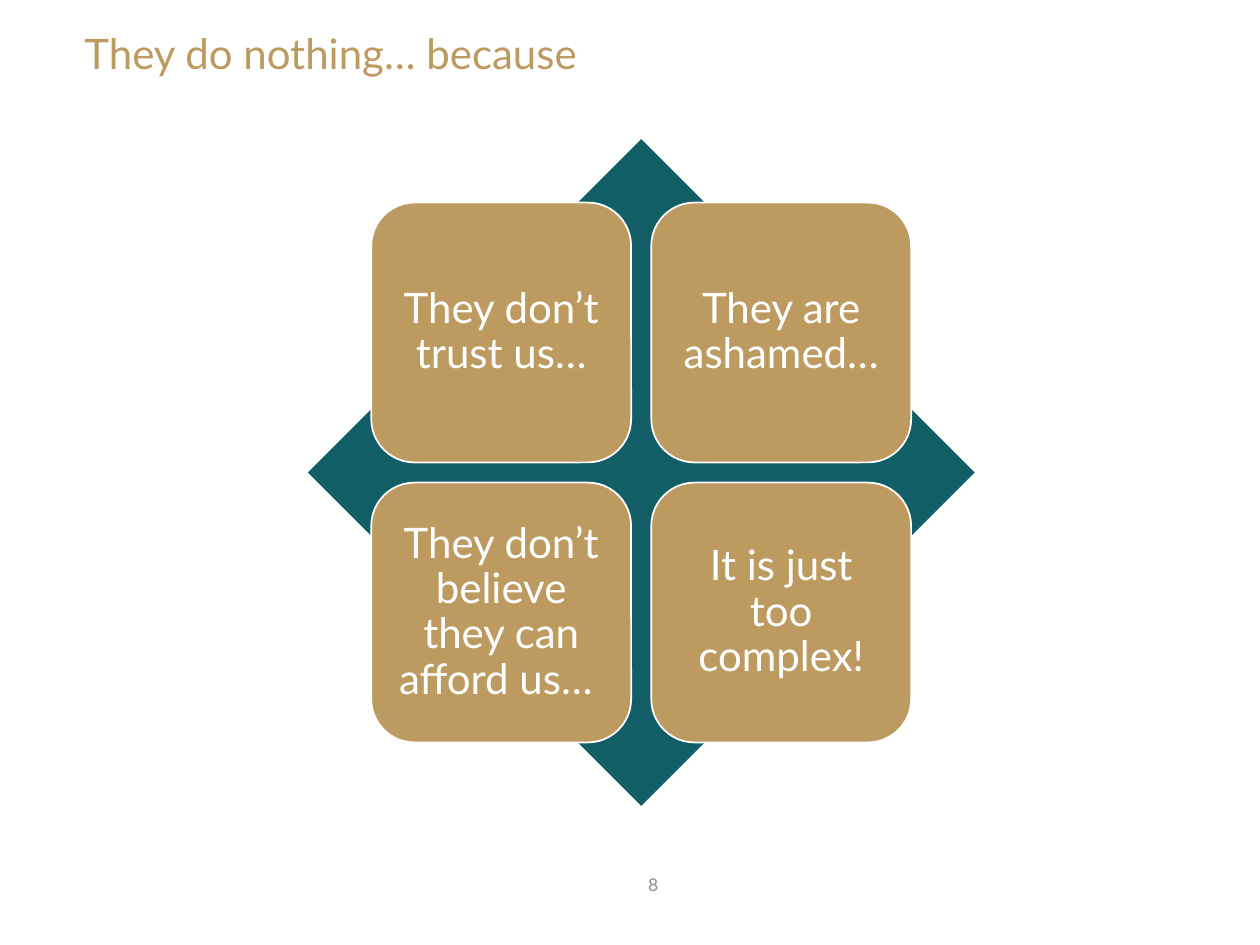
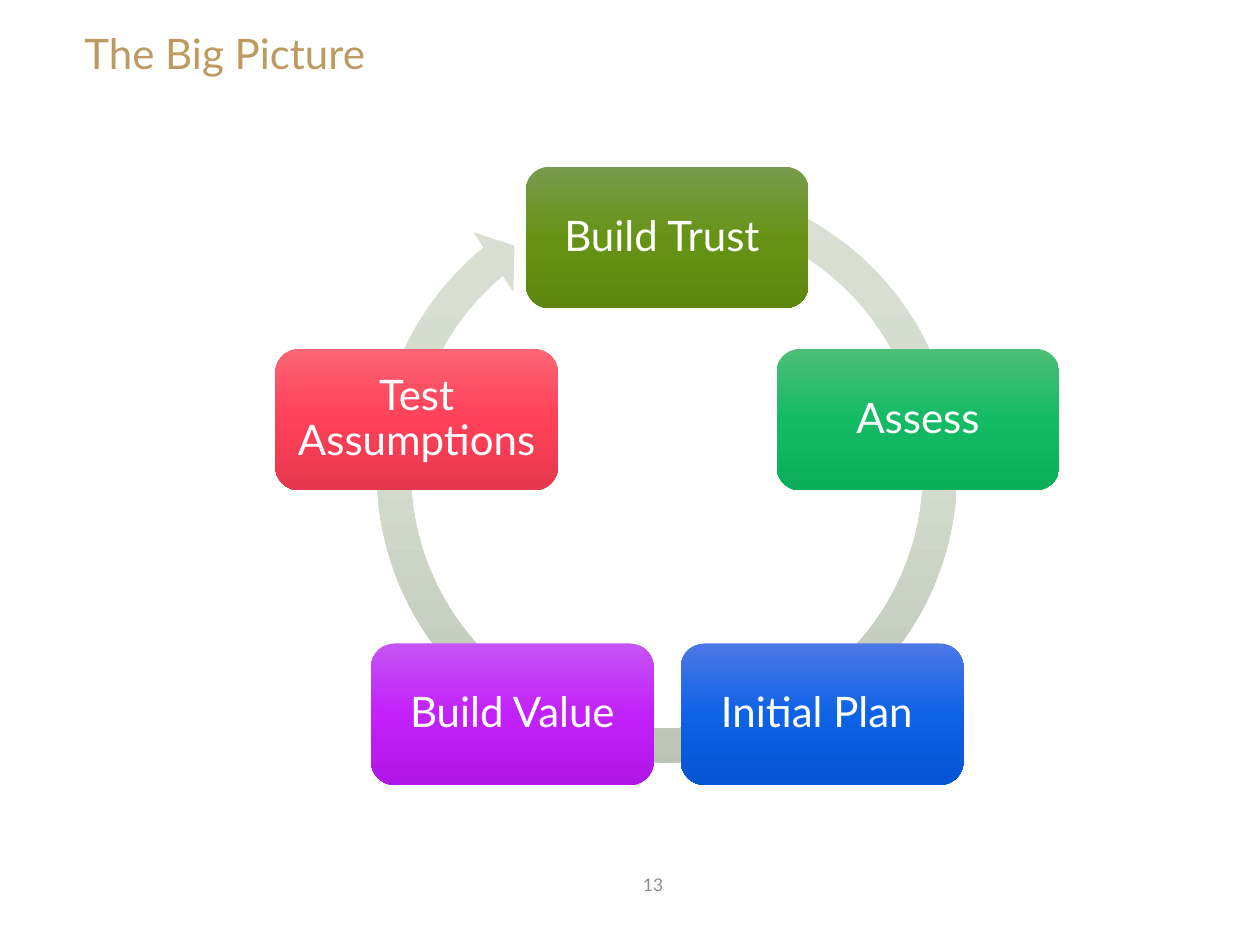
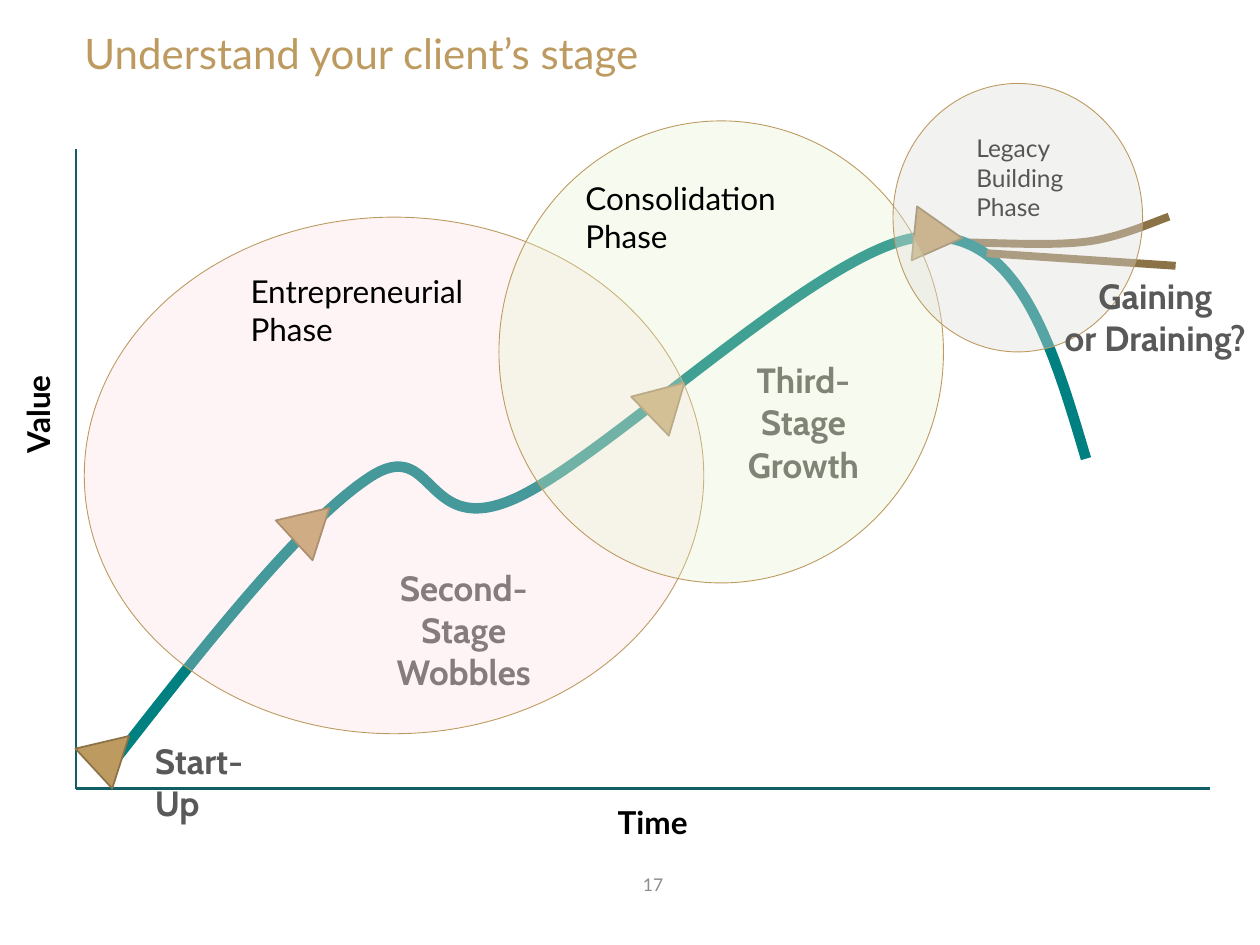
from math import cos, pi, sin

from lxml import etree
from pptx import Presentation
from pptx.dml.color import RGBColor
from pptx.enum.shapes import MSO_CONNECTOR, MSO_SHAPE
from pptx.enum.text import MSO_ANCHOR, PP_ALIGN
from pptx.oxml.ns import qn
from pptx.util import Pt

LEFT, CENTER = PP_ALIGN.LEFT, PP_ALIGN.CENTER
TOP, MIDDLE = MSO_ANCHOR.TOP, MSO_ANCHOR.MIDDLE
DIAMOND, ROUNDED = MSO_SHAPE.DIAMOND, MSO_SHAPE.ROUNDED_RECTANGLE
ELLIPSE, TRIANGLE = MSO_SHAPE.OVAL, MSO_SHAPE.ISOSCELES_TRIANGLE
CIRCULAR_ARROW = MSO_SHAPE.CIRCULAR_ARROW
STRAIGHT = MSO_CONNECTOR.STRAIGHT

BODY_FONT, STAGE_FONT = "Lato", "Cabin"
COLORS = {
    "gold": "BD9B60", "brown": "8C7347", "petrol": "115E67", "teal": "008080",
    "white": "FFFFFF", "black": "000000", "gray": "595959", "footer": "8C8C8C",
    "pink": "FEDADF", "lime": "E4F4C6", "silver": "E0DFDD",
}
TITLE_BOX = (41.2, 15.1, 535, 33.8)
NUMBER_BOX = (292.2, 491, 162, 28.8)

# Reasons
REASONS = [
    "They don’t trust us…", "They are ashamed…",
    "They don’t believe they can afford us… ", "It is just too complex!",
]
REASONS_CENTER = (366.4, 270)
DIAMOND_SIZE, TILE_SIZE, TILE_GAP = 381, 148.5, 11.5

# Cycle: label and gradient from top to bottom
STEPS = [
    ("Build Trust ", ("789B4E", "679315", "5D870E")),
    ("Assess", ("4DBE77", "13BB64", "0AAD59")),
    ("Initial Plan ", ("4D77E5", "0E62E6", "0455D5")),
    ("Build Value", ("C554F4", "C221F9", "B016E5")),
    ("Test Assumptions", ("FB6474", "FF4159", "E5374D")),
]
CYCLE_CENTER, CYCLE_RADIUS = (381.3, 286.3), 150.6
STEP_WIDTH, STEP_HEIGHT = 161.5, 80.8
ARROW_BOX = (204.6, 93.4, 353, 353)
ARROW_ADJUSTMENTS = (0.055, 3.31, 138.3, 173.53, 0.058)
ARROW_GRADIENT = ("DAE1D4", "D3DBCC", "BBC4B4")

# Growth chart: each curve is a start point followed by cubic segments
GAINING_CURVE = [
    (550.8, 138.5), (576, 139, 600.5, 140.4, 620, 138.2),
    (639.4, 136, 659.5, 126.7, 668, 123.8),
]
VALUE_CURVE = [
    (64.1, 436.4), (118.1, 367.2, 172.8, 298.1, 211, 272.9),
    (249.1, 247.7, 241.2, 308.2, 293.8, 285.1),
    (346.3, 262.1, 472.3, 139, 527, 135.4),
    (581.8, 131, 601.2, 196.6, 620.6, 262.1),
]
DRAINING_LINE = [(563.8, 144.7), (671.8, 151.9)]
AXES = [((43.4, 85), (43.4, 450.7)), ((691.2, 450.7), (43.4, 450.7))]
MARKER_SIZE = (31, 27.4)
MARKERS = [  # left, top, rotation
    (48.2, 416.2, 47.3), (162.7, 285.8, 47.3),
    (365.8, 214.6, 46), (520.6, 121, 95.7),
]
STAGES = [
    ("Start-Up", (81.4, 419, 87.1, 31.7), LEFT),
    ("Second-Stage\nWobbles", (198.7, 320.4, 132.5, 55.4), CENTER),
    ("Third-Stage\nGrowth", (401.8, 201.6, 114.5, 55.4), CENTER),
]
OUTCOME = ("Gaining\nor Draining?", (600.5, 153.4, 119.5, 55.4), CENTER)
AXIS_LABELS = [
    ("Time", (334.8, 455.4, 76.3, 28.8), CENTER, 0),
    ("Value", (-16.6, 213.5, 76.3, 28.8), LEFT, 270),
]
PHASES = [  # ellipse, colour, opacity, label, label box, size, label on top
    ((48.2, 124.1, 354, 295.2), "pink", 28,
     "Entrepreneurial Phase", (136.1, 151.9, 149, 51.1), 18, True),
    ((285.1, 69.1, 254, 264), "lime", 28,
     "Consolidation Phase", (327.4, 98.6, 149, 51.1), 18, True),
    ((510.3, 47.7, 142.6, 153.4), "silver", 39,
     "Legacy Building Phase", (550.8, 72.7, 92.9, 58.3), 14, False),
]


def rgb(color):
    return RGBColor.from_string(COLORS.get(color, color))


def write(shape, text, size, color, align=LEFT, anchor=TOP, font=BODY_FONT,
          bold=False, spacing=None):
    frame = shape.text_frame
    frame.word_wrap = True
    frame.vertical_anchor = anchor
    frame.text = text
    for para in frame.paragraphs:
        para.alignment = align
        para.line_spacing = spacing
        for span in para.runs:
            span.font.name = font
            span.font.size = Pt(size)
            span.font.bold = bold
            span.font.color.rgb = rgb(color)


def add_text(page, text, place, *style, rotation=0, **options):
    box = page.shapes.add_textbox(*map(Pt, place))
    box.rotation = rotation
    write(box, text, *style, **options)


def set_line(shape, color, width):
    shape.line.color.rgb = rgb(color)
    shape.line.width = Pt(width)


def add_shape(page, kind, place, fill, line=None, opacity=100):
    """Add a preset shape; fill is one colour or a tuple of gradient stops."""
    shape = page.shapes.add_shape(kind, *map(Pt, place))
    shape.shadow.inherit = False
    if isinstance(fill, tuple):
        set_gradient(shape, fill)
    else:
        shape.fill.solid()
        shape.fill.fore_color.rgb = rgb(fill)
    if opacity < 100:
        tint = shape.fill._xPr.find(".//" + qn("a:srgbClr"))
        etree.SubElement(tint, qn("a:alpha"), val=str(opacity * 1000))
    if line:
        set_line(shape, *line)
    else:
        shape.line.fill.background()
    return shape


def set_gradient(shape, colors):
    """Spread the colours evenly from top to bottom."""
    shape.fill.gradient()
    shape.fill.gradient_angle = 270
    stops = shape.fill._xPr.find(".//" + qn("a:gsLst"))
    stops.clear()
    for index, color in enumerate(colors):
        position = 100000 * index // (len(colors) - 1)
        stop = etree.SubElement(stops, qn("a:gs"), pos=str(position))
        etree.SubElement(stop, qn("a:srgbClr"), val=color)


def add_tile(page, text, place, fill, line=None):
    tile = add_shape(page, ROUNDED, place, fill, line)
    frame = tile.text_frame
    frame.margin_left = frame.margin_right = Pt(7.2)
    frame.margin_top = frame.margin_bottom = Pt(7.2)
    write(tile, text, 24, "white", CENTER, MIDDLE, spacing=0.9)


def add_curve(page, curve, color, width):
    """Outline the anchor points, then bend each side into a cubic segment."""
    anchors = [(Pt(point[-2]), Pt(point[-1])) for point in curve]
    builder = page.shapes.build_freeform(*anchors[0])
    builder.add_line_segments(anchors[1:], close=False)
    shape = builder.convert_to_shape()
    sides = shape._element.spPr.findall(".//" + qn("a:lnTo"))
    for side, segment in zip(sides, curve[1:]):
        side.clear()
        bend = etree.SubElement(side.getparent(), qn("a:cubicBezTo"))
        side.getparent().replace(side, bend)
        for x, y in zip(segment[::2], segment[1::2]):
            etree.SubElement(bend, qn("a:pt"), x=str(Pt(x) - shape.left),
                             y=str(Pt(y) - shape.top))
    shape.shadow.inherit = False
    shape.fill.background()
    set_line(shape, color, width)


def add_line(page, start, end, color, width):
    line = page.shapes.add_connector(STRAIGHT, *map(Pt, start + end))
    set_line(line, color, width)
    etree.SubElement(line._element.spPr, qn("a:effectLst"))


def add_page(deck, title, number):
    page = deck.slides.add_slide(deck.slide_layouts[6])
    add_text(page, title, TITLE_BOX, 24, "gold", LEFT, MIDDLE, spacing=0.9)
    add_text(page, number, NUMBER_BOX, 10, "footer", CENTER, MIDDLE)
    return page


def build_reasons(deck):
    page = add_page(deck, "They do nothing… because", "8")
    x, y = REASONS_CENTER
    half = DIAMOND_SIZE / 2
    add_shape(page, DIAMOND, (x - half, y - half, DIAMOND_SIZE, DIAMOND_SIZE),
              "petrol")
    pitch = TILE_SIZE + TILE_GAP
    offset = TILE_SIZE + TILE_GAP / 2
    for index, reason in enumerate(REASONS):
        row, column = divmod(index, 2)
        place = (x - offset + column * pitch, y - offset + row * pitch,
                 TILE_SIZE, TILE_SIZE)
        add_tile(page, reason, place, "gold", ("white", 1))


def build_cycle(deck):
    page = add_page(deck, "The Big Picture", "13")
    arrow = add_shape(page, CIRCULAR_ARROW, ARROW_BOX, ARROW_GRADIENT)
    for index, value in enumerate(ARROW_ADJUSTMENTS):
        arrow.adjustments[index] = value
    x, y = CYCLE_CENTER
    for index, (label, gradient) in enumerate(STEPS):
        angle = 2 * pi * index / len(STEPS)
        place = (x + CYCLE_RADIUS * sin(angle) - STEP_WIDTH / 2,
                 y - CYCLE_RADIUS * cos(angle) - STEP_HEIGHT / 2,
                 STEP_WIDTH, STEP_HEIGHT)
        add_tile(page, label, place, gradient)


def add_stage(page, label, place, align):
    add_text(page, label, place, 20, "gray", align, font=STAGE_FONT, bold=True)


def build_growth(deck):
    page = add_page(deck, "Understand your client’s stage", "17")
    add_curve(page, GAINING_CURVE, "brown", 4.5)
    add_curve(page, VALUE_CURVE, "teal", 6)
    for stage in STAGES:
        add_stage(page, *stage)
    for start, end in AXES:
        add_line(page, start, end, "petrol", 1.5)
    add_line(page, *DRAINING_LINE, "brown", 4.5)
    for left, top, rotation in MARKERS:
        marker = add_shape(page, TRIANGLE, (left, top, *MARKER_SIZE), "gold",
                           ("brown", 1))
        marker.rotation = rotation
    for label, place, align, rotation in AXIS_LABELS:
        add_text(page, label, place, 18, "black", align, bold=True,
                 rotation=rotation)
    for ellipse, color, opacity, label, place, size, on_top in PHASES:
        if not on_top:
            add_text(page, label, place, size, "black")
        add_shape(page, ELLIPSE, ellipse, color, ("gold", 0.5), opacity)
        if on_top:
            add_text(page, label, place, size, "black")
    add_stage(page, *OUTCOME)


def main():
    deck = Presentation()
    deck.slide_width, deck.slide_height = Pt(720), Pt(540)
    build_reasons(deck)
    build_cycle(deck)
    build_growth(deck)
    deck.save("out.pptx")


if __name__ == "__main__":
    main()
